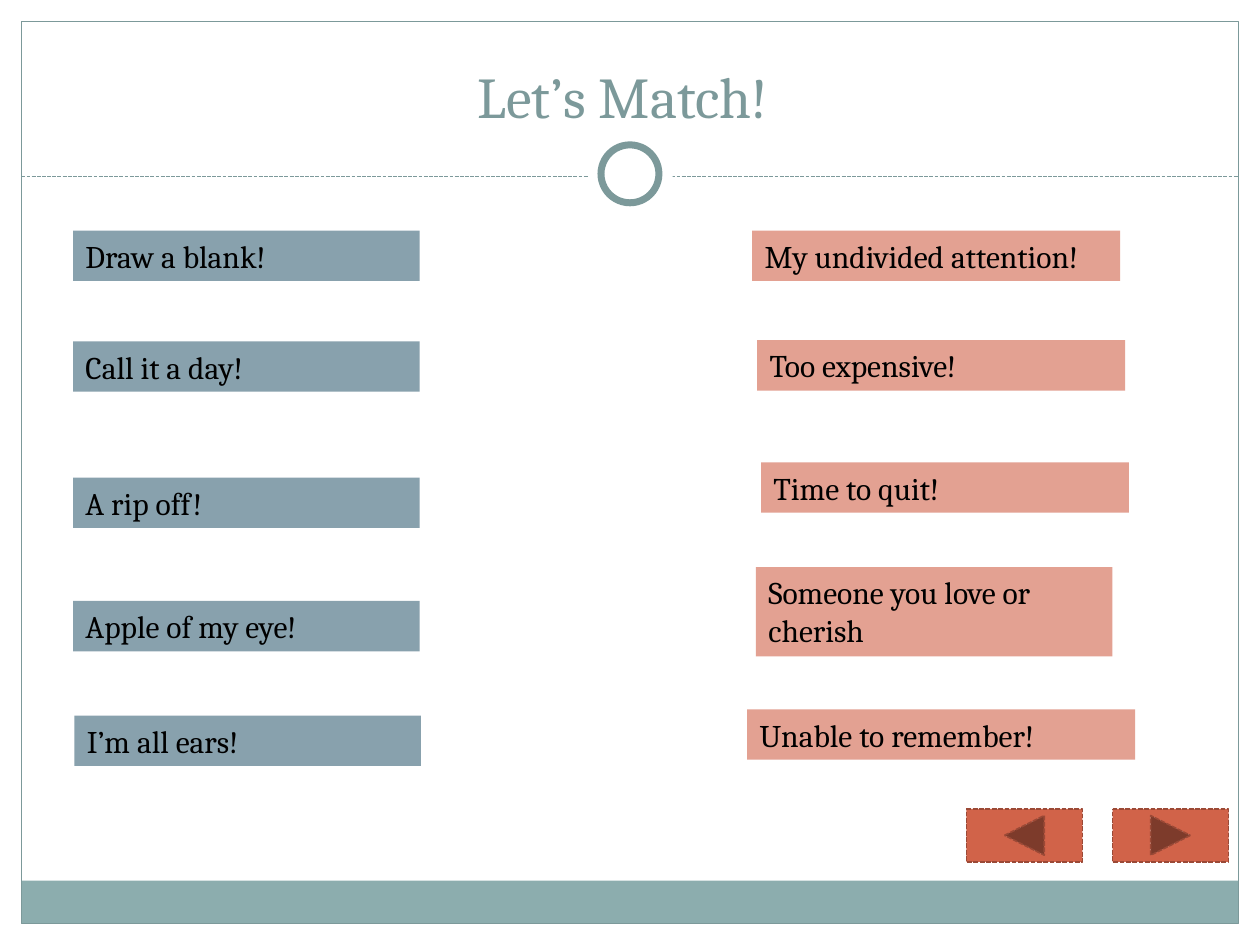
from lxml import etree
from pptx import Presentation
from pptx.dml.color import RGBColor
from pptx.enum import dml, shapes, text
from pptx.oxml import ns
from pptx.util import Inches, Pt

COLORS = {
    "white": "FFFFFF",
    "black": "000000",
    "frame": "7C999A",
    "footer": "8CADAE",
    "idiom": "88A1AD",
    "meaning": "E3A192",
    "button": "D16349",
    "button_edge": "9B4936",
}
FONT = "Cambria"
SHAPE = shapes.MSO_SHAPE

deck = Presentation()
deck.slide_width, deck.slide_height = Inches(10), Inches(7.5)
page = deck.slides.add_slide(deck.slide_layouts[6])


def add_box(kind, place, fill=None, edge=None, edge_width=0.75):
    """Add a shape without shadow; a missing fill or edge colour means none."""
    box = page.shapes.add_shape(kind, *(Inches(length) for length in place))
    box.shadow.inherit = False
    if fill:
        box.fill.solid()
        box.fill.fore_color.rgb = RGBColor.from_string(COLORS[fill])
    else:
        box.fill.background()
    if edge:
        box.line.color.rgb = RGBColor.from_string(COLORS[edge])
        box.line.width = Pt(edge_width)
    else:
        box.line.fill.background()
    return box


def write(box, words, size, color, align):
    box.text_frame.word_wrap = True
    para = box.text_frame.paragraphs[0]
    para.text = words
    para.alignment = align
    para.font.name = FONT
    para.font.size = Pt(size)
    para.font.color.rgb = RGBColor.from_string(COLORS[color])


# Frame, divider and ring
add_box(SHAPE.RECTANGLE, (0.17, 6.99, 9.66, 0.34), fill="footer")
add_box(SHAPE.RECTANGLE, (0.17, 0.17, 9.66, 7.16), edge="frame")

divider = page.shapes.add_connector(
    shapes.MSO_CONNECTOR.STRAIGHT, Inches(0.17), Inches(1.4), Inches(9.83), Inches(1.4)
)
divider.line.color.rgb = RGBColor.from_string(COLORS["frame"])
divider.line.width = Pt(0.75)
divider.line.dash_style = dml.MSO_LINE.SQUARE_DOT
etree.SubElement(divider._element.spPr, ns.qn("a:effectLst"))

add_box(SHAPE.OVAL, (4.67, 1.05, 0.67, 0.67), fill="white")
add_box(SHAPE.OVAL, (4.77, 1.15, 0.46, 0.46), fill="white", edge="frame", edge_width=4)

# Title
title = page.shapes.add_textbox(Inches(0.33), Inches(0.25), Inches(9.33), Inches(0.83))
title.text_frame.vertical_anchor = text.MSO_ANCHOR.BOTTOM
write(title, "Let’s Match! ", 33, "frame", text.PP_ALIGN.CENTER)

# Idioms on the left, meanings on the right
cards = {
    "idiom": [
        ("Draw a blank!", (0.58, 1.83, 2.75, 0.4)),
        ("Call it a day!", (0.58, 2.71, 2.75, 0.4)),
        ("A rip off!", (0.58, 3.79, 2.75, 0.4)),
        ("Apple of my eye!", (0.58, 4.77, 2.75, 0.4)),
        ("I’m all ears!", (0.59, 5.68, 2.75, 0.4)),
    ],
    "meaning": [
        ("My undivided attention!", (5.97, 1.83, 2.92, 0.4)),
        ("Too expensive!", (6.01, 2.7, 2.92, 0.4)),
        ("Time to quit!", (6.04, 3.67, 2.92, 0.4)),
        ("Someone you love or cherish", (6, 4.5, 2.83, 0.71)),
        ("Unable to remember!", (5.93, 5.63, 3.08, 0.4)),
    ],
}
for color, entries in cards.items():
    for words, place in entries:
        card = add_box(SHAPE.RECTANGLE, place, fill=color)
        card.text_frame.vertical_anchor = text.MSO_ANCHOR.TOP
        card.text_frame.auto_size = text.MSO_AUTO_SIZE.SHAPE_TO_FIT_TEXT
        write(card, words, 18, "black", text.PP_ALIGN.LEFT)

# Navigation buttons
for kind, left in (
    (SHAPE.ACTION_BUTTON_FORWARD_OR_NEXT, 8.83),
    (SHAPE.ACTION_BUTTON_BACK_OR_PREVIOUS, 7.67),
):
    button = add_box(kind, (left, 6.42, 0.92, 0.42), "button", "button_edge", 0.9)
    button.line.dash_style = dml.MSO_LINE.SQUARE_DOT

deck.save("out.pptx")
